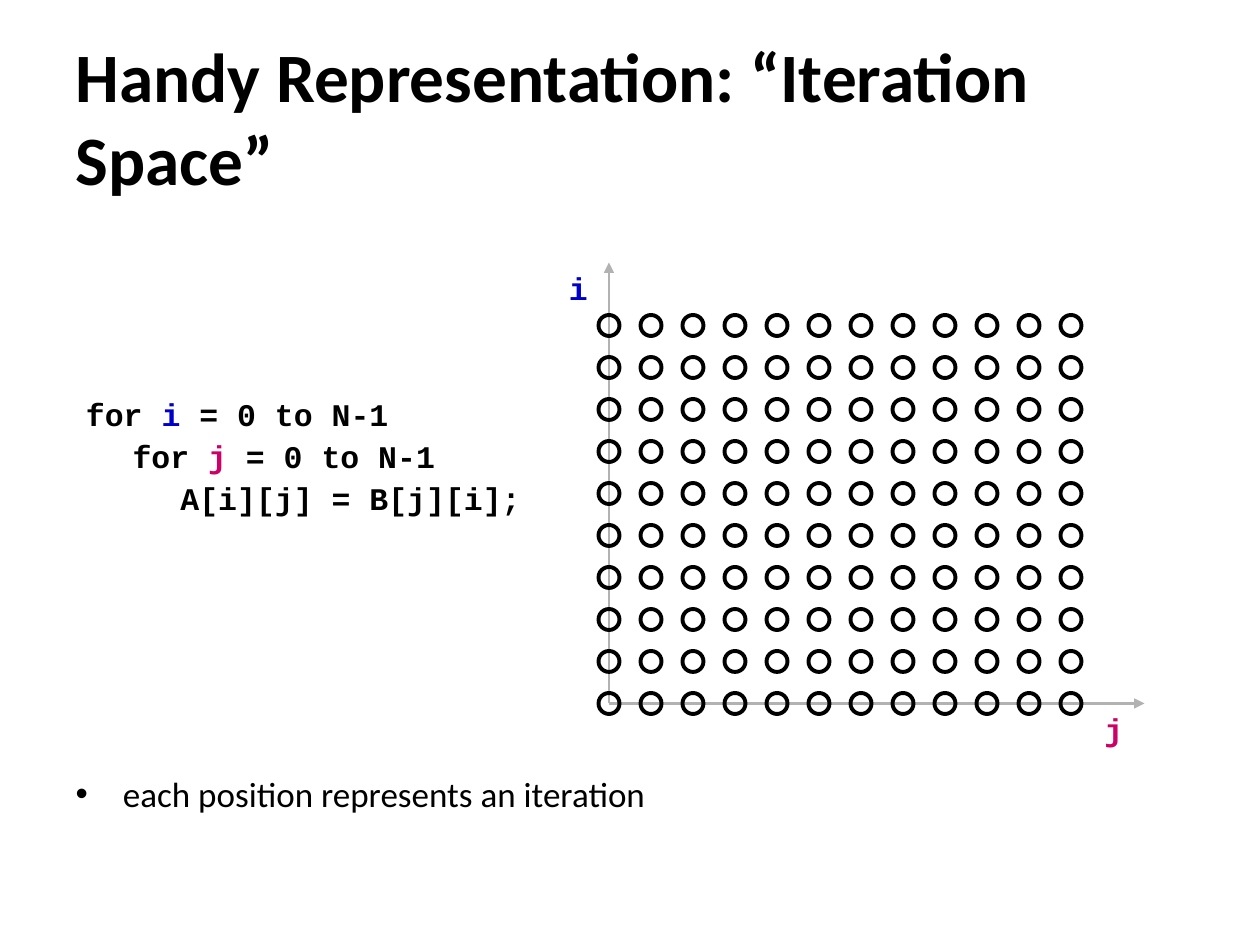
"""Build the iteration space slide: a nested loop beside its grid of iterations."""
from lxml import etree
from pptx import Presentation
from pptx import util as u
from pptx.dml.color import RGBColor
from pptx.enum import shapes, text
from pptx.oxml.ns import qn

UNIT = u.Inches(1) / 12
COLUMNS, ROWS, STEP, DOT = 12, 10, 4, 2
ORIGIN = (58, 67)
COLORS = {"ink": "000000", "i": "0000CC", "j": "CC0066", "axis": "B2B2B2"}
CODE = [
    [("for ", "ink"), ("i", "i"), (" = 0 to N-1", "ink")],
    [("\tfor ", "ink"), ("j", "j"), (" = 0 to N-1", "ink")],
    [("\t\tA[i][j] = B[j][i];", "ink")],
]


def units(*values):
    """Turn grid units into slide lengths."""
    return [u.Emu(round(value * UNIT)) for value in values]


def color(name):
    """Look up a named colour."""
    return RGBColor.from_string(COLORS[name])


def write(para, words, *, font="Calibri", size=20, ink="ink", bold=False):
    """Append a formatted span to a paragraph."""
    span = para.add_run()
    span.text = words
    span.font.name, span.font.size, span.font.bold = font, u.Pt(size), bold
    span.font.color.rgb = color(ink)


def fill_placeholder(holder, words, place, **style):
    """Move a placeholder and write its text."""
    holder.left, holder.top, holder.width, holder.height = units(*place)
    frame = holder.text_frame
    frame.auto_size = text.MSO_AUTO_SIZE.NONE
    para = frame.paragraphs[0]
    para.alignment = text.PP_ALIGN.LEFT
    write(para, words, **style)


def space_code(para):
    """Give a code paragraph tight lines, a relative gap above and tab stops."""
    para.line_spacing = 0.7
    para.space_before = u.Pt(0)
    props = para._p.get_or_add_pPr()
    gap = props.find(qn("a:spcBef"))
    gap.clear()
    etree.SubElement(gap, qn("a:spcPct"), val="50000")
    stops = etree.SubElement(props, qn("a:tabLst"))
    for inches in (0.37, 0.75):
        etree.SubElement(stops, qn("a:tab"), pos=str(u.Inches(inches)), algn="l")


def add_code(parent, lines, place):
    """Add a box of code lines made of coloured spans."""
    frame = parent.add_textbox(*units(*place)).text_frame
    frame.word_wrap = True
    frame.auto_size = text.MSO_AUTO_SIZE.SHAPE_TO_FIT_TEXT
    for number, line in enumerate(lines):
        para = frame.add_paragraph() if number else frame.paragraphs[0]
        space_code(para)
        for words, ink in line:
            write(para, words, font="Courier New", size=18, ink=ink, bold=True)


def add_axis(parent, end):
    """Add an arrow from the origin to an end point."""
    axis = parent.add_connector(shapes.MSO_CONNECTOR.STRAIGHT, *units(*ORIGIN, *end))
    axis.line.color.rgb = color("axis")
    axis.line.width = u.Pt(1.5)
    etree.SubElement(axis.line._get_or_add_ln(), qn("a:tailEnd"), type="triangle")
    etree.SubElement(axis._element.spPr, qn("a:effectLst"))


def add_dot(parent, column, row):
    """Add the circle of one iteration, counted from the origin."""
    left = ORIGIN[0] + column * STEP - DOT / 2
    top = ORIGIN[1] - row * STEP - DOT / 2
    dot = parent.add_shape(shapes.MSO_SHAPE.OVAL, *units(left, top, DOT, DOT))
    dot.shadow.inherit = False
    dot.fill.background()
    dot.line.color.rgb = color("ink")
    dot.line.width = u.Pt(2.25)


def add_space(page):
    """Add the axes, their labels and the grid of iterations as one group."""
    group = page.shapes.add_group_shape().shapes
    add_axis(group, (ORIGIN[0], 25))
    add_axis(group, (109, ORIGIN[1]))
    add_code(group, [[("i", "i")]], (53, 26, 4, 3.7))
    add_code(group, [[("j", "j")]], (104, 68, 4, 3.7))
    for row in range(ROWS):
        for column in range(COLUMNS):
            add_dot(group, column, row)


def main():
    """Build and save the deck."""
    deck = Presentation()
    deck.slide_width, deck.slide_height = units(120, 90)
    page = deck.slides.add_slide(deck.slide_layouts[1])
    title, body = page.placeholders
    fill_placeholder(title, "Handy Representation: “Iteration Space”",
                     (6, 3.6, 108, 15), size=39.6, bold=True)
    fill_placeholder(body, "each position represents an iteration",
                     (6, 73, 107.3, 8.5))
    add_code(page.shapes, CODE, (7, 38, 44, 12.3))
    add_space(page)
    deck.save("out.pptx")


if __name__ == "__main__":
    main()
